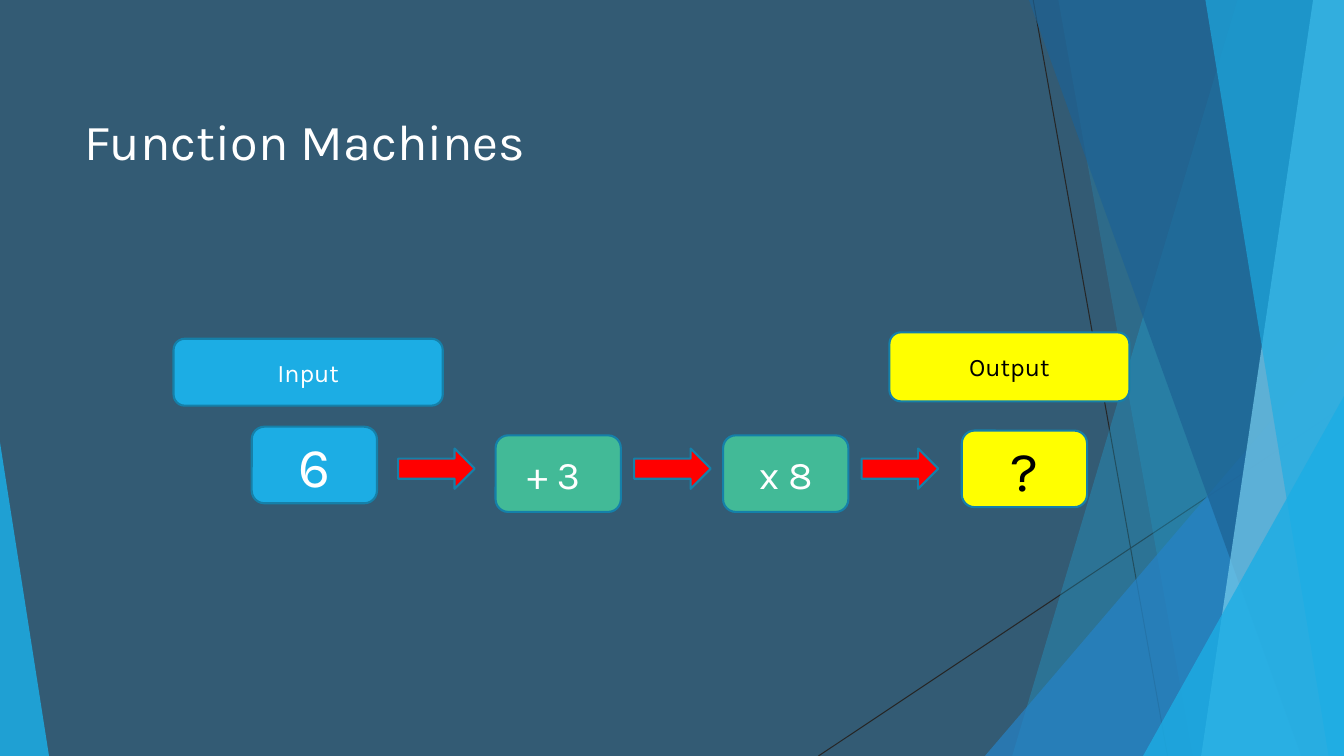
from dataclasses import dataclass

from lxml import etree
from pptx import Presentation
from pptx.dml.color import RGBColor
from pptx.enum import shapes, text
from pptx.oxml.ns import qn
from pptx.util import Pt

SHAPE = shapes.MSO_SHAPE
WIDTH, HEIGHT = 960, 540


@dataclass(frozen=True)
class Theme:
    font: str = "Karla"
    title_size: int = 36
    value_size: int = 40
    step_size: int = 28
    label_size: int = 18
    background: str = "335B74"
    white: str = "FFFFFF"
    black: str = "000000"
    thin_line: str = "262626"
    outline: str = "1580A9"
    cyan: str = "1CADE4"
    blue: str = "2683C6"
    navy: str = "1D6294"
    pale: str = "77CEEF"
    green: str = "42BA97"
    yellow: str = "FFFF00"
    red: str = "FF0000"


THEME = Theme()


def paint(shape, color, opacity=100):
    shape.shadow.inherit = False
    shape.fill.solid()
    shape.fill.fore_color.rgb = RGBColor.from_string(color)
    if opacity < 100:
        color_xml = shape.fill._xPr.find(qn("a:solidFill"))[0]
        etree.SubElement(color_xml, qn("a:alpha"), val=str(opacity * 1000))


def outline(shape):
    shape.line.color.rgb = RGBColor.from_string(THEME.outline)
    shape.line.width = Pt(1.5)


def style_text(para, size, color):
    para.font.name = THEME.font
    para.font.size = Pt(size)
    para.font.color.rgb = RGBColor.from_string(color)


def add_thin_line(group, start, end):
    line = group.shapes.add_connector(
        shapes.MSO_CONNECTOR.STRAIGHT, *map(Pt, start + end))
    line.line.color.rgb = RGBColor.from_string(THEME.thin_line)
    line.line.width = Pt(0.75)
    etree.SubElement(line._element.spPr, qn("a:effectLst"))


def add_facet(group, top_x, bottom_x, color, opacity):
    """Fill from a slanted left edge to the right edge of the slide."""
    builder = group.shapes.build_freeform(Pt(top_x), Pt(0))
    corners = [(WIDTH, 0), (WIDTH, HEIGHT), (bottom_x, HEIGHT)]
    builder.add_line_segments([(Pt(x), Pt(y)) for x, y in corners])
    facet = builder.convert_to_shape()
    paint(facet, color, opacity)
    facet.line.fill.background()


def add_corner(group, left, top, width, apex, color, opacity):
    """Add a triangle that stands on the bottom edge of the slide."""
    corner = group.shapes.add_shape(
        SHAPE.ISOSCELES_TRIANGLE, Pt(left), Pt(top), Pt(width), Pt(HEIGHT - top))
    corner.adjustments[0] = apex
    paint(corner, color, opacity)
    corner.line.fill.background()


def add_decoration(page):
    group = page.shapes.add_group_shape()
    add_thin_line(group, (738, 0), (834, HEIGHT))
    add_thin_line(group, (WIDTH, 290), (584.6, HEIGHT))
    add_facet(group, 884, 723, THEME.cyan, 30)
    add_facet(group, 756, 852, THEME.cyan, 20)
    add_corner(group, 703.5, 240, 256.5, 1, THEME.blue, 72)
    add_facet(group, 735, 929.5, THEME.navy, 70)
    add_facet(group, 938, 858, THEME.pale, 70)
    add_facet(group, 861, 949, THEME.cyan, 65)
    add_corner(group, 816.5, 283, 143.5, 1, THEME.cyan, 80)
    add_corner(group, 0, 316, 35, 0, THEME.cyan, 85)


def add_title(page, wording):
    title = page.shapes.title
    title.left, title.top, title.width, title.height = map(Pt, (53.3, 48.2, 676.8, 103.7))
    frame = title.text_frame
    frame.text = wording
    frame.word_wrap = True
    frame.auto_size = text.MSO_AUTO_SIZE.NONE
    frame.vertical_anchor = text.MSO_ANCHOR.MIDDLE
    para = frame.paragraphs[0]
    para.alignment = text.PP_ALIGN.LEFT
    style_text(para, THEME.title_size, THEME.white)


def add_box(page, wording, place, fill, size, color=THEME.white):
    box = page.shapes.add_shape(SHAPE.ROUNDED_RECTANGLE, *map(Pt, place))
    paint(box, fill)
    outline(box)
    frame = box.text_frame
    frame.text = wording
    frame.word_wrap = True
    frame.vertical_anchor = text.MSO_ANCHOR.MIDDLE
    para = frame.paragraphs[0]
    para.alignment = text.PP_ALIGN.CENTER
    style_text(para, size, color)


def add_arrow(page, left):
    arrow = page.shapes.add_shape(
        SHAPE.RIGHT_ARROW, Pt(left), Pt(320.4), Pt(54.7), Pt(28.8))
    paint(arrow, THEME.red)
    outline(arrow)


def add_machine(page):
    width, height = 89.5, 54.7
    add_box(page, "6", (179.8, 304.8, width, height), THEME.cyan, THEME.value_size)
    for left, step in ((354, "+ 3 "), (516.5, "x 8")):
        add_box(page, step, (left, 311, width, height), THEME.green, THEME.step_size)
    add_box(page, "?", (687, 307.6, width, height), THEME.yellow,
            THEME.value_size, THEME.black)
    for left in (284.4, 453, 615.5):
        add_arrow(page, left)
    add_box(page, "Input", (124, 242, 192.3, 47.8), THEME.cyan, THEME.label_size)
    add_box(page, "Output", (635.3, 237.4, 171.4, 49.3), THEME.yellow,
            THEME.label_size, THEME.black)


def main():
    deck = Presentation()
    deck.slide_width, deck.slide_height = Pt(WIDTH), Pt(HEIGHT)
    page = deck.slides.add_slide(deck.slide_layouts.get_by_name("Title Only"))
    page.background.fill.solid()
    page.background.fill.fore_color.rgb = RGBColor.from_string(THEME.background)
    add_decoration(page)
    add_title(page, "Function Machines")
    add_machine(page)
    deck.save("out.pptx")


if __name__ == "__main__":
    main()
